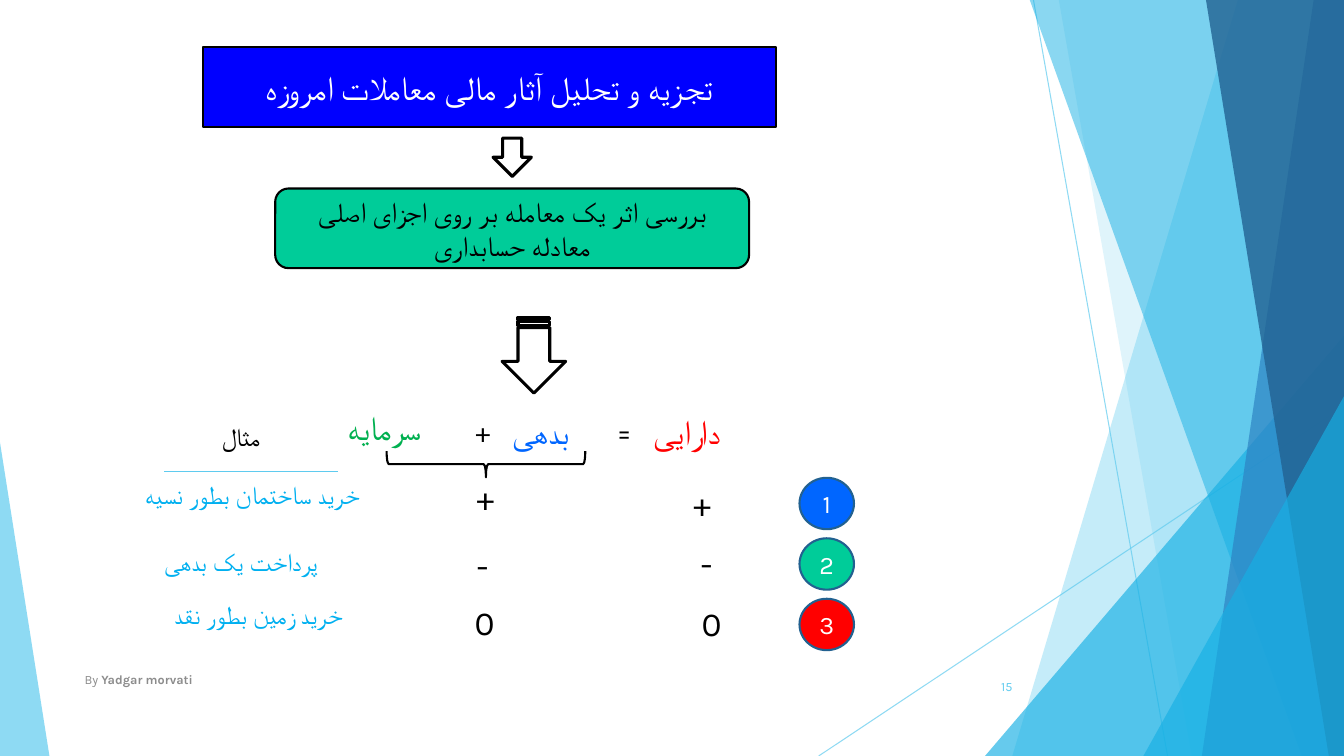
from lxml import etree
from pptx import Presentation
from pptx.dml.color import RGBColor
from pptx.enum.shapes import MSO_CONNECTOR, MSO_SHAPE
from pptx.enum.text import MSO_ANCHOR, MSO_AUTO_SIZE, PP_ALIGN
from pptx.oxml.ns import qn
from pptx.util import Inches, Pt

LEFT, CENTER, RIGHT = PP_ALIGN.LEFT, PP_ALIGN.CENTER, PP_ALIGN.RIGHT
TOP, MIDDLE = MSO_ANCHOR.TOP, MSO_ANCHOR.MIDDLE
TRIANGLE, ROUNDED = MSO_SHAPE.ISOSCELES_TRIANGLE, MSO_SHAPE.ROUNDED_RECTANGLE

WHITE, BLACK = RGBColor(255, 255, 255), RGBColor(0, 0, 0)
BLUE, GREEN, RED = RGBColor(0, 0x66, 255), RGBColor(0, 0xCC, 0x99), RGBColor(255, 0, 0)
TITLE_BLUE, CAPITAL_GREEN = RGBColor(0, 0, 255), RGBColor(0, 0xB0, 0x50)
EXAMPLE_BLUE, CIRCLE_LINE = RGBColor(0, 0xB0, 0xF0), RGBColor(0x22, 0x61, 0x90)
SKY, CYAN = RGBColor(0x5F, 0xCB, 0xEF), RGBColor(0x17, 0xB0, 0xE4)
STEEL, NAVY = RGBColor(0x2E, 0x83, 0xC3), RGBColor(0x22, 0x62, 0x92)
GRAY = RGBColor(0x8C, 0x8C, 0x8C)
FONT = "Karla"
WIDTH, HEIGHT = 13.33, 7.5

TITLE = "تجزیه و تحلیل آثار مالی معاملات امروزه"
SUBTITLE = "بررسی اثر یک معامله بر روی اجزای اصلی معادله حسابداری"

# Background, back to front: bands give top-left x and bottom-left x,
# triangles give box and apex position
BACKGROUND = [
    ("band", (12.28, 10.04), SKY, 36),
    ("band", (10.5, 11.82), SKY, 20),
    ("triangle", (9.77, 3.33, 3.56, 4.17, 1), CYAN, 66),
    ("band", (10.21, 12.91), CYAN, 50),
    ("band", (13.03, 11.92), STEEL, 70),
    ("band", (11.96, 13.18), NAVY, 80),
    ("triangle", (11.34, 3.93, 1.99, 3.57, 1), CYAN, 66),
    ("triangle", (0, 4.39, 0.49, 3.11, 0), SKY, 70),
]

# Text, left, top, width, size, colour
EQUATION = [
    ("دارایی", 6.38, 4.03, 1.07, 24, RED),
    ("=", 6.02, 4.06, 0.47, 20, BLACK),
    ("بدهی", 4.98, 4.03, 1.04, 24, BLUE),
    ("+", 4.62, 4.06, 0.47, 20, BLACK),
    ("سرمایه", 3.35, 3.99, 1.29, 24, CAPITAL_GREEN),
    ("مثال", 2.1, 4.13, 1.49, 18, BLACK),
]

# Circle colour, sign, (left, top) under assets, (left, top) under claims,
# example, its (left, top)
EFFECTS = [
    (BLUE, "+", (6.78, 4.74), (4.63, 4.68), "خرید ساختمان بطور نسیه", (1.34, 4.71)),
    (GREEN, "-", (6.85, 5.34), (4.63, 5.36), "پرداخت یک بدهی", (1.53, 5.37)),
    (RED, "0", (6.86, 5.93), (4.61, 5.92), "خرید زمین بطور نقد", (1.63, 5.9)),
]
CIRCLE_TOP, CIRCLE_STEP = 4.74, 0.6


def set_alpha(fill_parent, percent):
    color = fill_parent.find(".//" + qn("a:srgbClr"))
    etree.SubElement(color, qn("a:alpha"), val=str(percent * 1000))


def write(shape, text, size=18, color=BLACK, align=LEFT, anchor=TOP, bold_tail=""):
    frame = shape.text_frame
    frame.word_wrap = True
    frame.auto_size = MSO_AUTO_SIZE.NONE
    frame.vertical_anchor = anchor
    paragraph = frame.paragraphs[0]
    paragraph.alignment = align
    for part, bold in ((text, False), (bold_tail, True)):
        if part:
            run = paragraph.add_run()
            run.text = part
            run.font.name, run.font.size, run.font.bold = FONT, Pt(size), bold
            run.font.color.rgb = color


def add_text(slide, text, left, top, width, height, **style):
    box = slide.shapes.add_textbox(*map(Inches, (left, top, width, height)))
    write(box, text, **style)


def paint(shape, fill=None, line=None, weight=1.5):
    if fill is not None:
        shape.fill.solid()
        shape.fill.fore_color.rgb = fill
    else:
        shape.fill.background()
    if line is not None:
        shape.line.color.rgb = line
        shape.line.width = Pt(weight)
    else:
        shape.line.fill.background()


def add_shape(slide, kind, box, rotation=0, **colors):
    shape = slide.shapes.add_shape(kind, *map(Inches, box))
    shape.shadow.inherit = False
    shape.rotation = rotation
    paint(shape, **colors)
    return shape


def add_line(slide, start, end, weight, alpha=100):
    line = slide.shapes.add_connector(
        MSO_CONNECTOR.STRAIGHT, *map(Inches, (*start, *end)))
    line.line.color.rgb = SKY
    line.line.width = Pt(weight)
    properties = line._element.spPr
    set_alpha(properties, alpha)
    etree.SubElement(properties, qn("a:effectLst"))


def add_band(slide, top_x, bottom_x, color):
    """Draw a slanted band that reaches the right edge of the slide."""
    corners = [(top_x, -0.01), (WIDTH, -0.01), (WIDTH, HEIGHT), (bottom_x, HEIGHT)]
    points = [(Inches(x), Inches(y)) for x, y in corners]
    builder = slide.shapes.build_freeform(*points[0])
    builder.add_line_segments(points[1:], close=True)
    band = builder.convert_to_shape()
    band.shadow.inherit = False
    paint(band, color)
    return band


def draw_background(slide):
    add_line(slide, (10.25, 0), (11.58, HEIGHT), 0.75, 70)
    add_line(slide, (WIDTH, 4.03), (8.12, HEIGHT), 0.75, 70)
    for kind, geometry, color, alpha in BACKGROUND:
        if kind == "band":
            shape = add_band(slide, *geometry, color)
        else:
            shape = add_shape(slide, TRIANGLE, geometry[:4], fill=color)
            shape.adjustments[0] = geometry[4]
        set_alpha(shape._element.spPr, alpha)


def draw_title(slide):
    title = slide.shapes.title
    title.left, title.top, title.width, title.height = map(
        Inches, (2.01, 0.47, 5.69, 0.79))
    outline = etree.SubElement(title._element.spPr, qn("a:prstGeom"), prst="roundRect")
    etree.SubElement(outline, qn("a:avLst"))
    paint(title, TITLE_BLUE, BLACK)
    write(title, TITLE, size=24, color=WHITE, align=CENTER, anchor=MIDDLE)


def draw_steps(slide):
    subtitle = add_shape(slide, ROUNDED, (2.73, 1.87, 4.7, 0.79), fill=GREEN, line=BLACK)
    write(subtitle, SUBTITLE, size=20, align=CENTER, anchor=MIDDLE)
    add_shape(slide, MSO_SHAPE.DOWN_ARROW, (4.89, 1.37, 0.38, 0.38),
              fill=WHITE, line=BLACK, weight=2.25)
    add_shape(slide, MSO_SHAPE.STRIPED_RIGHT_ARROW, (4.92, 3.21, 0.75, 0.63),
              rotation=90, fill=WHITE, line=BLACK, weight=2.25)


def draw_equation(slide):
    for text, left, top, width, size, color in EQUATION:
        add_text(slide, text, left, top, width, 0.5, size=size, color=color)
    add_shape(slide, MSO_SHAPE.LEFT_BRACE, (4.69, 3.62, 0.26, 1.97),
              rotation=270, line=BLACK)
    add_line(slide, (3.35, 4.68), (1.63, 4.68), 1)


def draw_effects(slide):
    for index, (color, sign, assets, claims, example, place) in enumerate(EFFECTS):
        top = CIRCLE_TOP + index * CIRCLE_STEP
        circle = add_shape(slide, MSO_SHAPE.FLOWCHART_CONNECTOR,
                           (7.93, top, 0.54, 0.51), fill=color, line=CIRCLE_LINE)
        write(circle, str(index + 1), color=WHITE, align=CENTER, anchor=MIDDLE)
        for position in (assets, claims):
            add_text(slide, sign, *position, 0.44, 0.5, size=24)
        add_text(slide, example, *place, 2.4, 0.4, color=EXAMPLE_BLUE)


def main():
    presentation = Presentation()
    presentation.slide_width, presentation.slide_height = Inches(WIDTH), Inches(HEIGHT)
    slide = presentation.slides.add_slide(presentation.slide_layouts[5])
    draw_background(slide)
    draw_title(slide)
    draw_steps(slide)
    draw_equation(slide)
    draw_effects(slide)
    add_text(slide, "By ", 0.74, 6.54, 6.89, 0.4, size=9, color=GRAY,
             anchor=MIDDLE, bold_tail="Yadgar morvati")
    add_text(slide, "15", 9.39, 6.61, 0.75, 0.4, size=9, color=SKY,
             align=RIGHT, anchor=MIDDLE)
    presentation.save("out.pptx")


if __name__ == "__main__":
    main()
